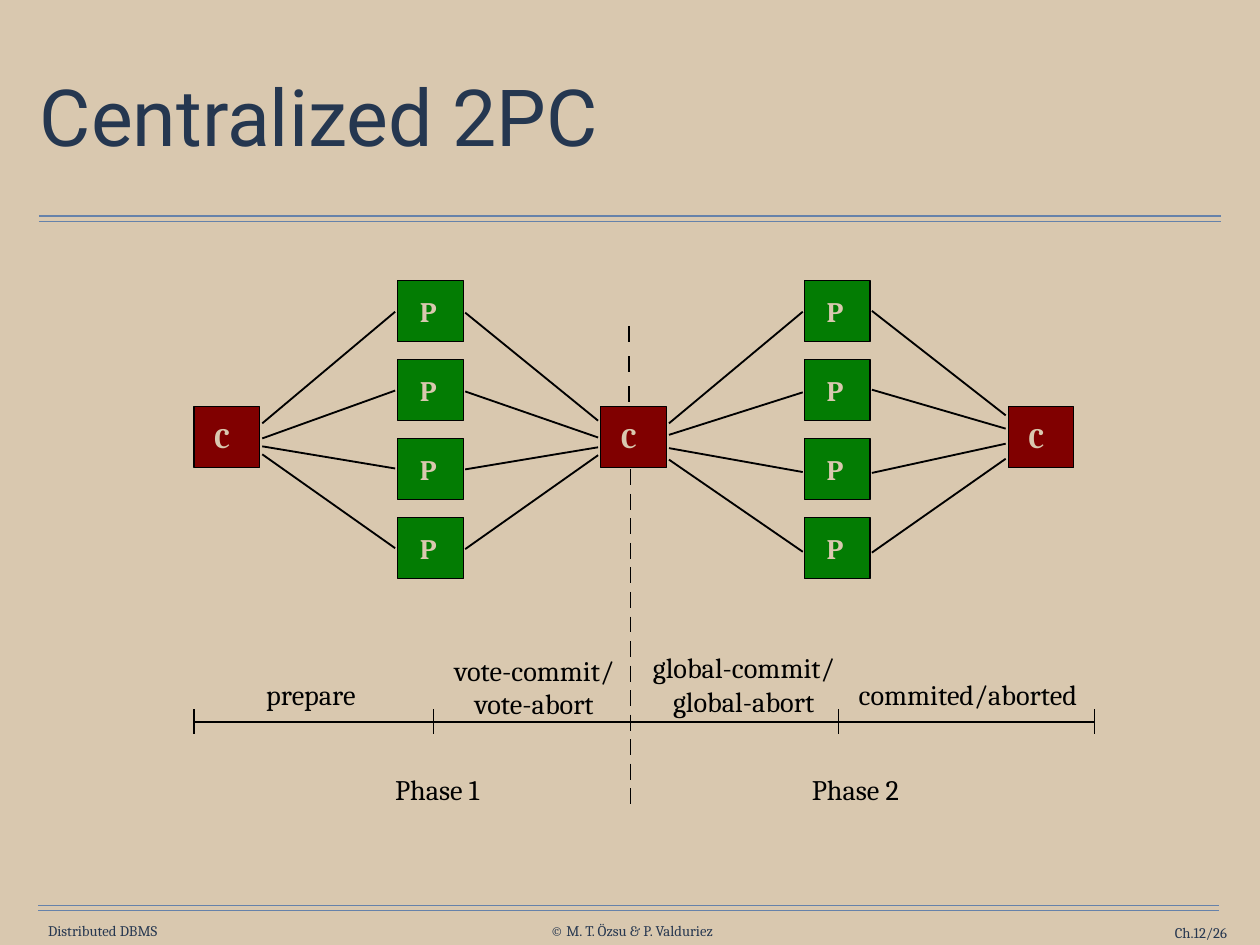
from lxml.etree import SubElement
from pptx import Presentation
from pptx.dml.color import RGBColor
from pptx.enum.shapes import MSO_CONNECTOR, MSO_SHAPE
from pptx.enum.text import MSO_ANCHOR as ANCHOR, MSO_AUTO_SIZE as AUTO, PP_ALIGN as ALIGN
from pptx.oxml.ns import qn
from pptx.util import Inches, Pt

COLORS = {
    "sand": "D9C8AF", "navy": "263750", "title": "253750", "rule": "6682AA",
    "red": "800000", "green": "037C03", "black": "000000",
}
NODE_W, NODE_H = 0.74, 0.69
HUB_TOP = 4.59
HUBS = [2.19, 6.78, 11.38]
PEERS = [4.49, 9.08]
PEER_TOP, PEER_STEP = 3.17, 0.89
AXIS = 8.15
DASH = 0.18

# Each fan: x and four y values at its left end, then at its right end
FANS = [
    (2.96, [4.78, 4.95, 5.04, 5.13], 4.46, [3.52, 4.41, 5.29, 6.19]),
    (5.25, [3.53, 4.42, 5.3, 6.2], 6.75, [4.75, 4.94, 5.05, 5.14]),
    (7.55, [4.78, 4.91, 5.06, 5.19], 9.06, [3.52, 4.43, 5.33, 6.23]),
    (9.84, [3.51, 4.4, 5.34, 6.24], 11.35, [4.69, 4.84, 5.01, 5.18]),
]
LABELS = [
    (2.81, 7.58, 1.4, ["prepare"]),
    (4.8, 7.3, 2.46, ["vote-commit/", "vote-abort"]),
    (7.02, 7.27, 2.75, ["global-commit/", "global-abort"]),
    (9.3, 7.58, 3.25, ["commited/aborted"]),
    (4.2, 8.65, 1.47, ["Phase 1"]),
    (8.92, 8.65, 1.47, ["Phase 2"]),
]


def rgb(name):
    return RGBColor.from_string(COLORS[name])


def add_line(slide, x1, y1, x2, y2, color="black", width=1):
    line = slide.shapes.add_connector(
        MSO_CONNECTOR.STRAIGHT, Inches(x1), Inches(y1), Inches(x2), Inches(y2))
    line.line.color.rgb = rgb(color)
    line.line.width = Pt(width)
    SubElement(line._element.spPr, qn("a:effectLst"))


def set_margins(frame, x, y):
    frame.margin_left = frame.margin_right = Inches(x)
    frame.margin_top = frame.margin_bottom = Inches(y)


def set_font(para, size, color, name="Cambria", bold=False):
    font = para.font
    font.name, font.size, font.bold = name, Pt(size), bold
    font.color.rgb = rgb(color)


def add_text(slide, x, y, w, h, lines, size, color, pad=(0, 0),
             align=ALIGN.CENTER, anchor=ANCHOR.MIDDLE, wrap=False):
    """Add a text box that grows to fit its lines."""
    box = slide.shapes.add_textbox(Inches(x), Inches(y), Inches(w), Inches(h))
    frame = box.text_frame
    frame.word_wrap = wrap
    frame.auto_size = AUTO.SHAPE_TO_FIT_TEXT
    frame.vertical_anchor = anchor
    set_margins(frame, *pad)
    frame.text = "\n".join(lines)
    for para in frame.paragraphs:
        para.alignment = align
        set_font(para, size, color)
    return frame


def add_title(slide, text):
    frame = add_text(slide, 0.39, 0.49, 13.44, 1.76, [text], 64, "title",
                     (0.06, 0.06), ALIGN.LEFT, wrap=True)
    frame.auto_size = AUTO.NONE
    para = frame.paragraphs[0]
    para.line_spacing = 0.9
    set_font(para, 64, "title", "Roboto")


def add_node(slide, x, y, letter, color, indent):
    node = slide.shapes.add_shape(
        MSO_SHAPE.RECTANGLE, Inches(x), Inches(y), Inches(NODE_W), Inches(NODE_H))
    node.shadow.inherit = False
    node.fill.solid()
    node.fill.fore_color.rgb = rgb(color)
    node.line.color.rgb = rgb("black")
    node.line.width = Pt(1)
    frame = node.text_frame
    set_margins(frame, 0, 0)
    frame.margin_left = Inches(indent)
    frame.vertical_anchor = ANCHOR.MIDDLE
    frame.text = letter
    para = frame.paragraphs[0]
    para.alignment = ALIGN.LEFT
    set_font(para, 23, "sand", bold=True)


def add_dashes(slide, x, top, step, count):
    for i in range(count):
        y = top + i * step
        add_line(slide, x, y, x, y + DASH)


def add_frame(slide):
    """Add the double rules and the footer."""
    for x, y, end in [(0.44, 2.44, 13.78), (0.43, 10.22, 13.76)]:
        for top in (y, y + 0.06):
            add_line(slide, x, top, end, top, "rule")
    add_text(slide, 0.47, 10.41, 1.38, 0.2, ["Distributed DBMS"], 12, "navy")
    add_text(slide, 6.09, 10.41, 2.08, 0.2, ["© M. T. Özsu & P. Valduriez"], 12, "navy")
    add_text(slide, 12.31, 10.43, 1.54, 0.2, ["Ch.12/26"], 12, "navy",
             align=ALIGN.RIGHT, wrap=True)


def add_graph(slide):
    for x in HUBS:
        add_node(slide, x, HUB_TOP, "C", "red", 0.23)
    for x in PEERS:
        for i in range(4):
            add_node(slide, x, PEER_TOP + i * PEER_STEP, "P", "green", 0.25)
    for x1, starts, x2, ends in FANS:
        for y1, y2 in zip(starts, ends):
            add_line(slide, x1, y1, x2, y2, width=1.5)


def add_timeline(slide):
    add_line(slide, 2.19, AXIS, 12.35, AXIS, width=1.5)
    for x in (2.19, 4.89, 9.46, 12.35):
        add_line(slide, x, AXIS - 0.14, x, AXIS + 0.14)
    add_dashes(slide, 7.1, 3.68, 0.34, 3)
    add_dashes(slide, 7.12, 5.3, 3.6 / 13, 14)
    for x, y, w, lines in LABELS:
        add_text(slide, x, y, w, 0.15 + 0.38 * len(lines), lines, 23, "black",
                 (0.14, 0.07), anchor=ANCHOR.TOP)


def main():
    deck = Presentation()
    deck.slide_width, deck.slide_height = Inches(14.22), Inches(10.67)
    slide = deck.slides.add_slide(deck.slide_layouts[6])
    slide.background.fill.solid()
    slide.background.fill.fore_color.rgb = rgb("sand")
    add_frame(slide)
    add_title(slide, "Centralized 2PC")
    add_graph(slide)
    add_timeline(slide)
    deck.save("out.pptx")


if __name__ == "__main__":
    main()
